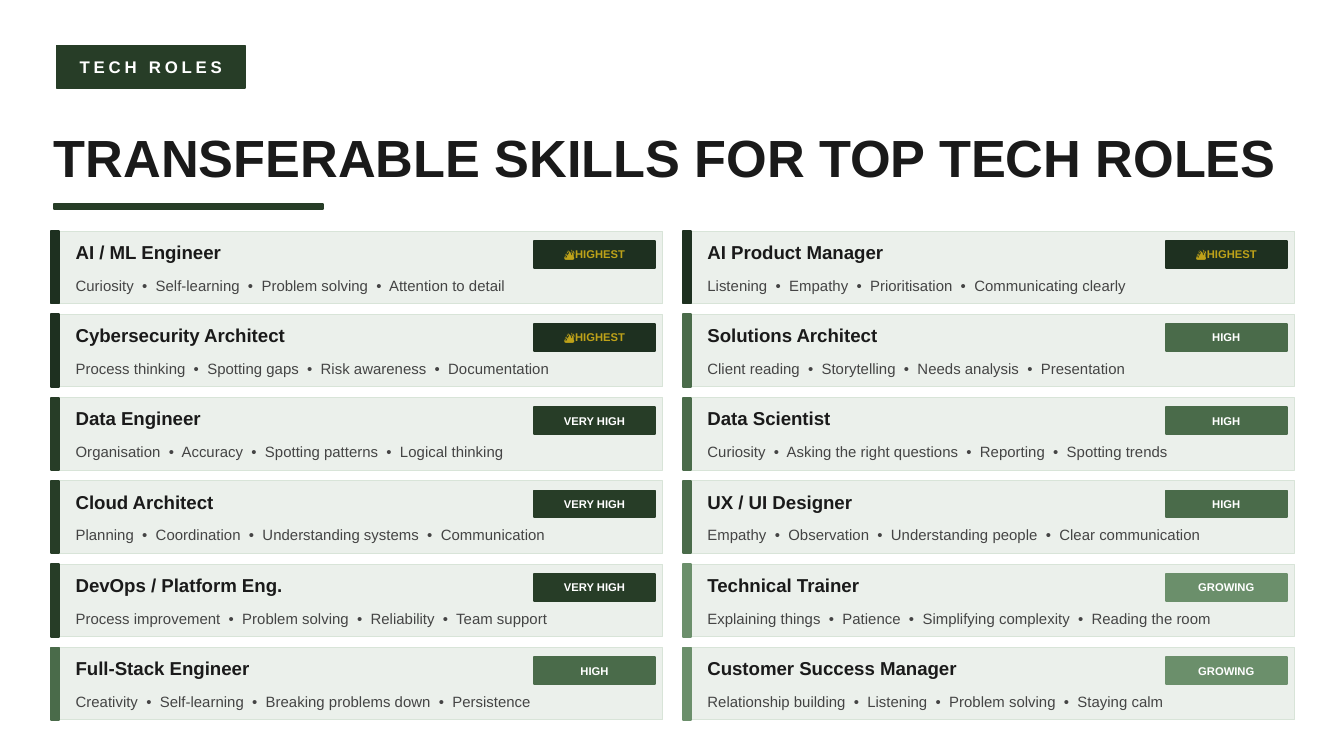
import pptx
import pptx.dml.color
import pptx.enum.shapes
import pptx.enum.text
import pptx.util

Cm = pptx.util.Cm
Pt = pptx.util.Pt
RGBColor = pptx.dml.color.RGBColor
Align = pptx.enum.text.PP_ALIGN

WHITE = RGBColor(0xFF, 0xFF, 0xFF)
INK = RGBColor(0x1A, 0x1A, 0x1A)
GREY = RGBColor(0x44, 0x44, 0x44)
GOLD = RGBColor(0xBE, 0xA2, 0x19)
DEEP = RGBColor(0x1E, 0x30, 0x20)
FOREST = RGBColor(0x27, 0x3D, 0x27)
MOSS = RGBColor(0x4A, 0x6B, 0x4A)
SAGE = RGBColor(0x6B, 0x8F, 0x6B)
CARD = RGBColor(0xEB, 0xF0, 0xEB)
CARD_EDGE = RGBColor(0xD8, 0xE4, 0xD8)

TAG = "TECH ROLES"
TITLE = "TRANSFERABLE SKILLS FOR TOP TECH ROLES"
DEMAND = {
    "🔥HIGHEST": (DEEP, GOLD),
    "VERY HIGH": (FOREST, WHITE),
    "HIGH": (MOSS, WHITE),
    "GROWING": (SAGE, WHITE),
}
COLUMNS = [
    [
        ("AI / ML Engineer", "🔥HIGHEST",
         ["Curiosity", "Self-learning", "Problem solving", "Attention to detail"]),
        ("Cybersecurity Architect", "🔥HIGHEST",
         ["Process thinking", "Spotting gaps", "Risk awareness", "Documentation"]),
        ("Data Engineer", "VERY HIGH",
         ["Organisation", "Accuracy", "Spotting patterns", "Logical thinking"]),
        ("Cloud Architect", "VERY HIGH",
         ["Planning", "Coordination", "Understanding systems", "Communication"]),
        ("DevOps / Platform Eng.", "VERY HIGH",
         ["Process improvement", "Problem solving", "Reliability", "Team support"]),
        ("Full-Stack Engineer", "HIGH",
         ["Creativity", "Self-learning", "Breaking problems down", "Persistence"]),
    ],
    [
        ("AI Product Manager", "🔥HIGHEST",
         ["Listening", "Empathy", "Prioritisation", "Communicating clearly"]),
        ("Solutions Architect", "HIGH",
         ["Client reading", "Storytelling", "Needs analysis", "Presentation"]),
        ("Data Scientist", "HIGH",
         ["Curiosity", "Asking the right questions", "Reporting", "Spotting trends"]),
        ("UX / UI Designer", "HIGH",
         ["Empathy", "Observation", "Understanding people", "Clear communication"]),
        ("Technical Trainer", "GROWING",
         ["Explaining things", "Patience", "Simplifying complexity", "Reading the room"]),
        ("Customer Success Manager", "GROWING",
         ["Relationship building", "Listening", "Problem solving", "Staying calm"]),
    ],
]

GRID_LEFT, GRID_TOP, LAST_TOP = 0.97, 4.37, 12.24
CARD_WIDTH, CARD_HEIGHT, COLUMN_STEP = 11.56, 1.37, 11.94
ROW_STEP = (LAST_TOP - GRID_TOP) / (len(COLUMNS[0]) - 1)


def write(box, text, size, color, bold=True, align=Align.LEFT):
    frame = box.text_frame
    frame.word_wrap = True
    frame.auto_size = pptx.enum.text.MSO_AUTO_SIZE.NONE
    frame.vertical_anchor = pptx.enum.text.MSO_ANCHOR.MIDDLE
    frame.margin_left = frame.margin_right = 0
    frame.margin_top = frame.margin_bottom = 0
    para = frame.paragraphs[0]
    para.text = text
    para.alignment = align
    para.font.name = "Arial"
    para.font.size = Pt(size)
    para.font.bold = bold
    para.font.color.rgb = color
    return para


def add_block(page, left, top, width, height, fill, edge=None, weight=1):
    block = page.shapes.add_shape(
        pptx.enum.shapes.MSO_SHAPE.RECTANGLE, Cm(left), Cm(top), Cm(width), Cm(height))
    block.shadow.inherit = False
    block.fill.solid()
    block.fill.fore_color.rgb = fill
    block.line.color.rgb = edge or fill
    block.line.width = Pt(weight)
    return block


def add_text(page, left, top, width, height, *style, **options):
    box = page.shapes.add_textbox(Cm(left), Cm(top), Cm(width), Cm(height))
    return write(box, *style, **options)


def add_card(page, left, top, role, demand, skills):
    fill, ink = DEMAND[demand]
    add_block(page, left, top, CARD_WIDTH, CARD_HEIGHT, CARD, CARD_EDGE, 0.5)
    add_block(page, left, top, 0.15, CARD_HEIGHT, fill)
    badge = add_block(page, left + 9.12, top + 0.18, 2.29, 0.51, fill)
    write(badge, demand, 6, ink, align=Align.CENTER)
    add_text(page, left + 0.46, top + 0.2, 8.46, 0.38, role, 10, INK)
    add_text(page, left + 0.46, top + 0.84, 10.9, 0.36,
             "  •  ".join(skills), 8, GREY, bold=False)


def main():
    deck = pptx.Presentation()
    deck.slide_width, deck.slide_height = Cm(25.4), Cm(14.29)
    page = deck.slides.add_slide(deck.slide_layouts[5])

    title = page.shapes.title
    title.left, title.top, title.width, title.height = Cm(1.02), Cm(2.41), Cm(23.37), Cm(1.09)
    write(title, TITLE, 28, INK)

    tag = add_block(page, 1.07, 0.86, 3.56, 0.81, FOREST)
    para = write(tag, TAG, 9, WHITE, align=Align.CENTER)
    para.runs[0]._r.get_or_add_rPr().set("spc", "200")
    add_block(page, 1.02, 3.86, 5.08, 0.1, FOREST)

    for column, cards in enumerate(COLUMNS):
        for row, card in enumerate(cards):
            add_card(page, GRID_LEFT + column * COLUMN_STEP, GRID_TOP + row * ROW_STEP, *card)

    deck.save("out.pptx")


if __name__ == "__main__":
    main()
